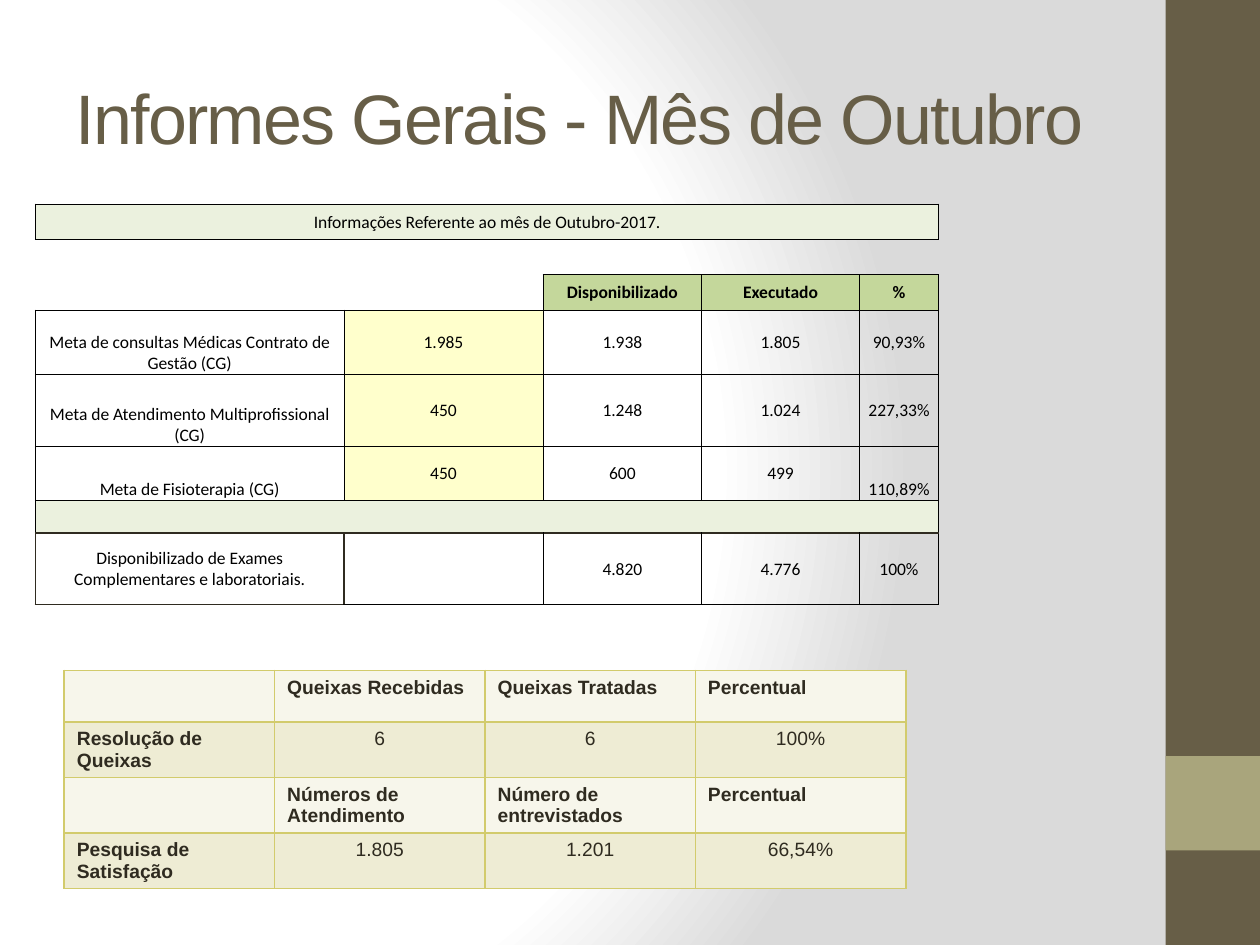
from dataclasses import dataclass
from typing import NamedTuple

from lxml import etree
from pptx import Presentation
from pptx.dml.color import RGBColor
from pptx.enum import shapes, text
from pptx.oxml.ns import qn
from pptx.util import Inches, Pt

COLOURS = {
    "brown": "675E47", "khaki": "A9A57C", "white": "FFFFFF", "grey": "DADADA",
    "black": "000000", "ink": "2F2B20", "pale green": "EBF1DE",
    "green": "C4D79B", "yellow": "FFFFCC", "gold": "D2CB6C",
    "cream": "F7F6EB", "sand": "EEECD4",
}
NO_STYLE = "{2D5ABB26-0587-4C30-8999-92F81FD0307C}"
CENTER, LEFT = text.PP_ALIGN.CENTER, text.PP_ALIGN.LEFT
TOP, MIDDLE, BOTTOM = (text.MSO_ANCHOR.TOP, text.MSO_ANCHOR.MIDDLE,
                       text.MSO_ANCHOR.BOTTOM)


class Line(NamedTuple):
    width: float
    colour: str


NO_LINE = Line(0, "")
THIN, DARK, GOLD = Line(0.5, "black"), Line(1, "ink"), Line(1, "gold")


@dataclass
class Cell:
    words: str = ""
    fill: str = ""
    bold: bool = False
    align: int = CENTER
    anchor: int = MIDDLE
    span: int = 1
    line: Line = THIN


@dataclass
class Grid:
    left: float
    top: float
    columns: list[float]
    heights: list[float]
    font: str
    size: float
    colour: str
    insets: dict[str, float]
    rows: list[list[Cell]]


def rgb(name: str) -> RGBColor:
    return RGBColor.from_string(COLOURS[name])


def add_bar(slide, top: float, height: float, colour: str) -> None:
    bar = slide.shapes.add_shape(shapes.MSO_SHAPE.RECTANGLE, Inches(9.25),
                                 Inches(top), Inches(0.75), Inches(height))
    bar.shadow.inherit = False
    bar.fill.solid()
    bar.fill.fore_color.rgb = rgb(colour)
    bar.line.fill.background()


def add_solid(parent, colour: str) -> None:
    fill = etree.SubElement(parent, qn("a:solidFill"))
    etree.SubElement(fill, qn("a:srgbClr"), val=COLOURS[colour])


def paint_background(slide) -> None:
    """White glow from the left that fades to grey."""
    slide.background.fill.gradient()
    gradient = next(slide.element.iter(qn("a:gradFill")))
    for child in list(gradient):
        gradient.remove(child)
    stops = etree.SubElement(gradient, qn("a:gsLst"))
    for percent, name in ((0, "white"), (75, "white"), (100, "grey")):
        stop = etree.SubElement(stops, qn("a:gs"), pos=str(percent * 1000))
        etree.SubElement(stop, qn("a:srgbClr"), val=COLOURS[name])
    circle = etree.SubElement(gradient, qn("a:path"), path="circle")
    etree.SubElement(circle, qn("a:fillToRect"),
                     l="20000", t="50000", r="100000", b="50000")


def write_title(slide, words: str) -> None:
    title = slide.shapes.title
    title.left, title.top = Inches(0.5), Inches(0.3)
    title.width, title.height = Inches(8.33), Inches(1.25)
    frame = title.text_frame
    frame.word_wrap = True
    frame.auto_size = text.MSO_AUTO_SIZE.NONE
    frame.vertical_anchor = MIDDLE
    frame.text = words
    frame.paragraphs[0].alignment = LEFT
    run = frame.paragraphs[0].runs[0]
    run.font.name, run.font.size = "Arial", Pt(40)
    run.font.color.rgb = rgb("brown")
    run.font._element.set("spc", "-100")


def draw_borders(cell, layout: list[list[Cell]], r: int, c: int) -> None:
    """Give every edge the heavier line of the two cells that share it."""
    properties = cell._tc.get_or_add_tcPr()
    for side, down, across in (("L", 0, -1), ("R", 0, 1), ("T", -1, 0), ("B", 1, 0)):
        line = layout[r][c].line
        y, x = r + down, c + across
        if 0 <= y < len(layout) and 0 <= x < len(layout[r]):
            line = max(line, layout[y][x].line)
        edge = etree.SubElement(properties, qn(f"a:ln{side}"),
                                w=str(int(Pt(line.width))))
        if line.width:
            add_solid(edge, line.colour)
        else:
            etree.SubElement(edge, qn("a:noFill"))


def fill_cell(cell, content: Cell, grid: Grid) -> None:
    for name, value in grid.insets.items():
        setattr(cell, name, Inches(value))
    cell.vertical_anchor = content.anchor
    if content.fill:
        cell.fill.solid()
        cell.fill.fore_color.rgb = rgb(content.fill)
    else:
        cell.fill.background()
    paragraph = cell.text_frame.paragraphs[0]
    paragraph.alignment = content.align
    if not content.words or cell.is_spanned:
        etree.SubElement(paragraph._p, qn("a:endParaRPr"), sz=str(grid.size * 100))
        return
    run = paragraph.add_run()
    run.text = content.words
    formats = {"name": grid.font, "size": Pt(grid.size), "bold": content.bold}
    for name, value in formats.items():
        setattr(run.font, name, value)
    run.font.color.rgb = rgb(grid.colour)


def add_grid(slide, grid: Grid) -> None:
    layout = [[cell for cell in row for _ in range(cell.span)] for row in grid.rows]
    frame = slide.shapes.add_table(
        len(layout), len(grid.columns), Inches(grid.left), Inches(grid.top),
        Inches(sum(grid.columns)), Inches(sum(grid.heights)))
    table = frame.table
    table.first_row = table.horz_banding = False
    next(frame._element.iter(qn("a:tableStyleId"))).text = NO_STYLE
    for column, width in zip(table.columns, grid.columns):
        column.width = Inches(width)
    for row, height in zip(table.rows, grid.heights):
        row.height = Inches(height)
    for r, row in enumerate(grid.rows):
        start = 0
        for content in row:
            if content.span > 1:
                table.cell(r, start).merge(table.cell(r, start + content.span - 1))
            start += content.span
    for r, row in enumerate(layout):
        for c, content in enumerate(row):
            draw_borders(table.cell(r, c), layout, r, c)
            fill_cell(table.cell(r, c), content, grid)


def goal(name: str, target: str, offered: str, done: str, share: str,
         share_anchor: int = MIDDLE) -> list[Cell]:
    return [Cell(name, anchor=BOTTOM, span=2), Cell(target, "yellow"),
            Cell(offered), Cell(done), Cell(share, anchor=share_anchor)]


def survey_headings(*names: str) -> list[Cell]:
    return [Cell(name, "cream", True, LEFT, TOP, line=GOLD) for name in ("", *names)]


def survey_values(name: str, *values: str) -> list[Cell]:
    return [Cell(name, "sand", True, LEFT, TOP, line=GOLD),
            *(Cell(value, "sand", anchor=TOP, line=GOLD) for value in values)]


BLANK = Cell(line=NO_LINE)
GOALS = Grid(
    0.28, 1.62, [0.63, 1.82, 1.58, 1.26, 1.25, 0.63],
    [0.28, 0.28, 0.28, 0.51, 0.57, 0.43, 0.26, 0.57, 0.28], "Calibri", 10, "black",
    {"margin_left": 0.01, "margin_right": 0.01, "margin_top": 0.01, "margin_bottom": 0},
    [
        [Cell("Informações Referente ao mês de Outubro-2017.", "pale green", span=6)],
        [BLANK] * 6,
        [BLANK] * 3 + [Cell(name, "green", True)
                       for name in ("Disponibilizado", "Executado", "%")],
        goal("Meta de consultas Médicas Contrato de Gestão (CG)",
             "1.985", "1.938", "1.805", "90,93%"),
        goal("Meta de Atendimento Multiprofissional (CG)",
             "450", "1.248", "1.024", "227,33%"),
        goal("Meta de Fisioterapia (CG)", "450", "600", "499", "110,89%", BOTTOM),
        [Cell(fill="pale green", span=6)],
        [Cell("Disponibilizado de Exames Complementares e laboratoriais.",
              span=2, line=DARK),
         Cell(), Cell("4.820"), Cell("4.776"), Cell("100%")],
        [BLANK] * 6,
    ])
SURVEYS = Grid(
    0.51, 5.32, [1.67] * 4, [0.41] * 4, "Arial", 11, "ink", {},
    [
        survey_headings("Queixas Recebidas", "Queixas Tratadas", "Percentual"),
        survey_values("Resolução de Queixas", "6", "6", "100%"),
        survey_headings("Números de Atendimento", "Número de entrevistados", "Percentual"),
        survey_values("Pesquisa de Satisfação", "1.805", "1.201", "66,54%"),
    ])


def main() -> None:
    deck = Presentation()
    deck.slide_width, deck.slide_height = Inches(10), Inches(7.5)
    slide = deck.slides.add_slide(deck.slide_layouts[5])
    paint_background(slide)
    add_bar(slide, 0, 7.5, "brown")
    add_bar(slide, 6, 0.75, "khaki")
    write_title(slide, "Informes Gerais - Mês de Outubro")
    for grid in (GOALS, SURVEYS):
        add_grid(slide, grid)
    deck.save("out.pptx")


if __name__ == "__main__":
    main()
